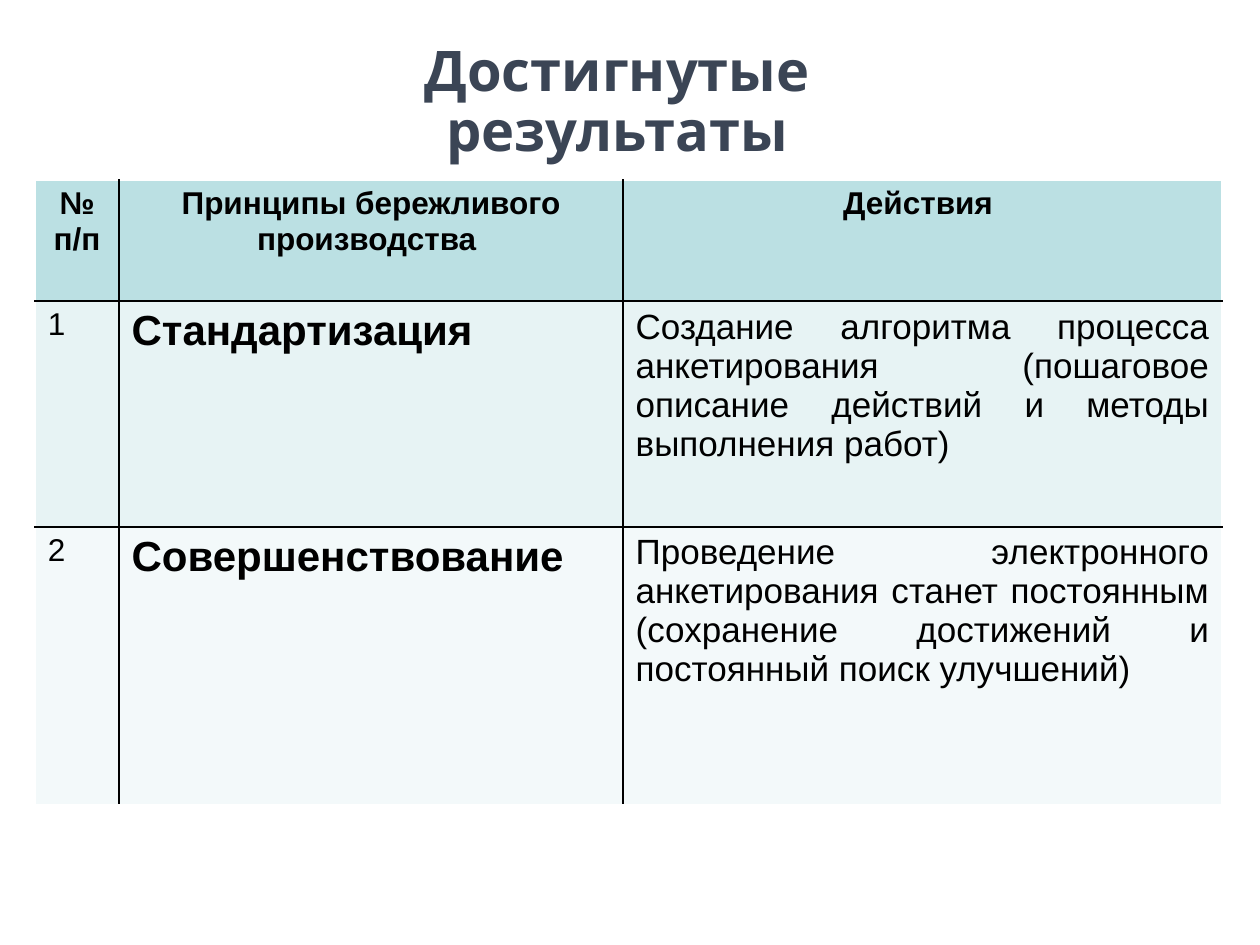
"""Build the slide with the table of achieved results."""
import pptx
import pptx.dml.color
import pptx.enum.text
import pptx.oxml
import pptx.oxml.ns
import pptx.util
from pptx.util import Cm

COLORS = {"title": "3B4555", "text": "000000", "inner": "000000", "outer": "FFFFFF"}
ROW_FILLS = ["BBE0E3", "E7F3F4", "F3F9FA"]
ALIGN = pptx.enum.text.PP_ALIGN

TITLE = "Достигнутые результаты"
ROWS = [
    ["№ п/п", "Принципы бережливого производства ", "Действия "],
    ["1", "Стандартизация",
     "Создание алгоритма процесса анкетирования "
     "(пошаговое описание действий и методы выполнения работ)"],
    ["2", "Совершенствование",
     "Проведение электронного анкетирования станет постоянным "
     "(сохранение достижений и постоянный поиск улучшений)"],
]
COLUMN_WIDTHS = [1.69, 10.16, 12.07]
ROW_HEIGHTS = [2.44, 4.55, 5.6]

TITLE_FORMAT = {"name": "League Spartan", "size": 32, "bold": True, "color": "title"}
HEADER_FORMAT = {"name": "Arial", "size": 18, "bold": True, "color": "text"}
BODY_FORMATS = [
    ({**HEADER_FORMAT, "bold": False}, ALIGN.LEFT),
    ({**HEADER_FORMAT, "size": 24}, ALIGN.LEFT),
    ({**HEADER_FORMAT, "size": 20, "bold": False}, ALIGN.JUSTIFY),
]


def write(frame, text, values, alignment):
    paragraph = frame.paragraphs[0]
    paragraph.alignment = alignment
    run = paragraph.add_run()
    run.text = text
    for name, value in values.items():
        if name == "color":
            run.font.color.rgb = pptx.dml.color.RGBColor.from_string(COLORS[value])
        else:
            setattr(run.font, name, pptx.util.Pt(value) if name == "size" else value)
    return paragraph


def set_borders(cell, outer_sides):
    properties = cell._tc.get_or_add_tcPr()
    for index, (side, is_outer) in enumerate(outer_sides.items()):
        color = COLORS["outer" if is_outer else "inner"]
        properties.insert(index, pptx.oxml.parse_xml(
            f'<a:{side} {pptx.oxml.ns.nsdecls("a")} w="12700"><a:solidFill>'
            f'<a:srgbClr val="{color}"/></a:solidFill></a:{side}>'))


def add_title(slide):
    shape = slide.shapes.add_textbox(Cm(5.08), Cm(0.74), Cm(14.73), Cm(1.63))
    shape.text_frame.word_wrap = True
    paragraph = write(shape.text_frame, TITLE, TITLE_FORMAT, ALIGN.CENTER)
    paragraph.line_spacing = 0.9


def add_results_table(slide):
    table = slide.shapes.add_table(
        len(ROWS), len(COLUMN_WIDTHS), Cm(0.71), Cm(3.63),
        Cm(sum(COLUMN_WIDTHS)), Cm(sum(ROW_HEIGHTS))).table
    for column, width in zip(table.columns, COLUMN_WIDTHS):
        column.width = Cm(width)
    for row, height in zip(table.rows, ROW_HEIGHTS):
        row.height = Cm(height)
    for row_index, texts in enumerate(ROWS):
        for column_index, text in enumerate(texts):
            cell = table.cell(row_index, column_index)
            cell.fill.solid()
            cell.fill.fore_color.rgb = pptx.dml.color.RGBColor.from_string(ROW_FILLS[row_index])
            values, alignment = BODY_FORMATS[column_index]
            if row_index == 0:
                values, alignment = HEADER_FORMAT, ALIGN.CENTER
            write(cell.text_frame, text, values, alignment)
            set_borders(cell, {
                "lnL": column_index == 0,
                "lnR": column_index == len(texts) - 1,
                "lnT": row_index == 0,
                "lnB": row_index == len(ROWS) - 1,
            })


def main():
    presentation = pptx.Presentation()
    presentation.slide_width, presentation.slide_height = Cm(25.4), Cm(19.05)
    slide = presentation.slides.add_slide(presentation.slide_layouts[6])
    add_title(slide)
    add_results_table(slide)
    presentation.save("out.pptx")


if __name__ == "__main__":
    main()
